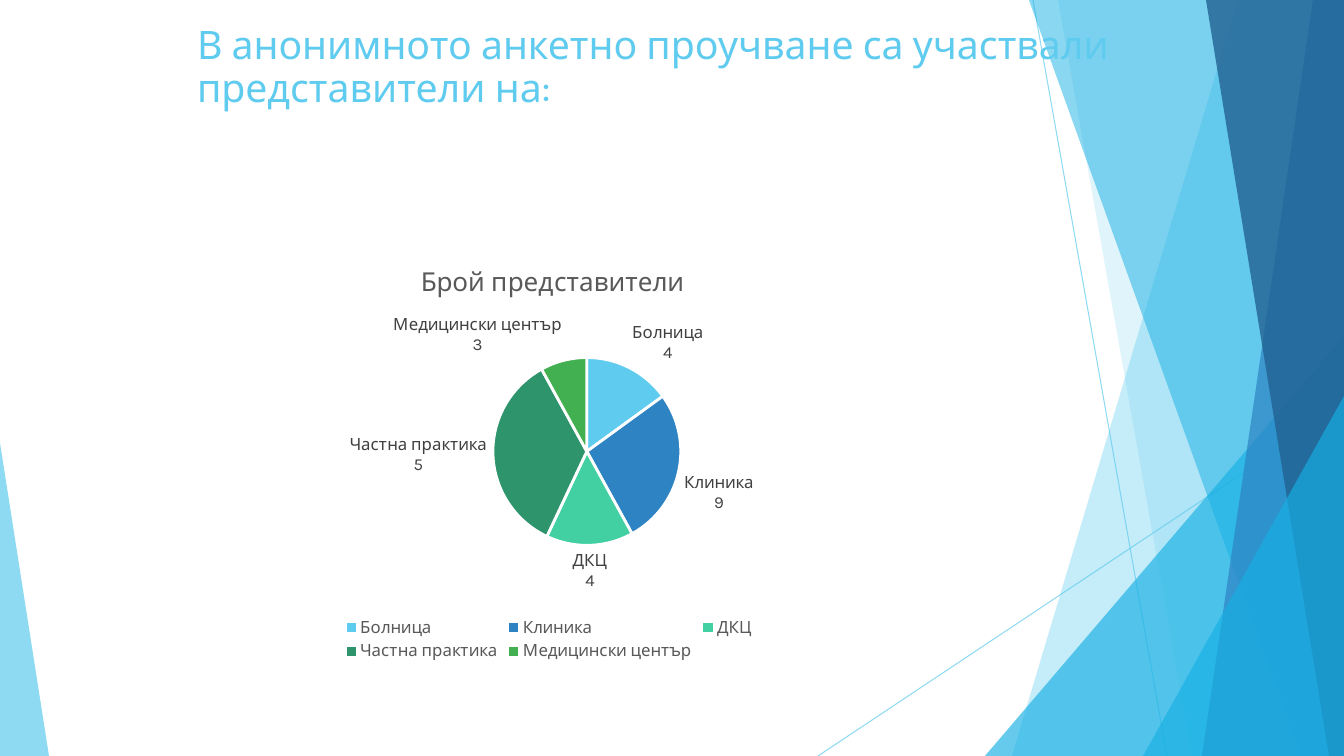
from lxml import etree
from pptx import Presentation
from pptx.chart.data import CategoryChartData
from pptx.dml.color import RGBColor
from pptx.enum import chart as charts, shapes, text
from pptx.oxml.ns import qn
from pptx.util import Emu, Pt

SCALE = 914400 / 100.8
FONT = "Karla"
COLORS = {
    "sky": "5FCBEF", "azure": "17B0E4", "blue": "2E83C3", "navy": "226292",
    "mint": "42D0A2", "teal": "2E946B", "green": "42B051",
    "white": "FFFFFF", "gray": "595959", "dark": "404040",
}
SLICES = [
    ("Болница", 15, 4, "sky"),
    ("Клиника", 27, 9, "blue"),
    ("ДКЦ", 15, 4, "mint"),
    ("Частна практика", 35, 5, "teal"),
    ("Медицински център", 8, 3, "green"),
]


def px(length):
    """Turn pixels into EMU."""
    return Emu(round(length * SCALE))


def rgb(name):
    """Look up a named colour."""
    return RGBColor.from_string(COLORS[name])


def style_font(font, size, color):
    """Set the typeface, size and colour of a font."""
    font.name, font.size, font.bold = FONT, Pt(size), False
    font.color.rgb = rgb(color)


def write(frame, words, size=12, color="dark", align=None, spacing=None):
    """Fill a text frame with formatted words, one paragraph per line."""
    frame.text = words
    for para in frame.paragraphs:
        if align is not None:
            para.alignment = align
        if spacing:
            para.line_spacing = spacing
        for span in para.runs:
            style_font(span.font, size, color)


def set_opacity(shape, percent):
    """Make every colour of a shape partly transparent."""
    for color in list(shape._element.spPr.iter(qn("a:srgbClr"))):
        etree.SubElement(color, qn("a:alpha")).set("val", str(percent * 1000))


def paint(shape, color, opacity):
    """Give a shape a translucent fill and no outline or shadow."""
    shape.shadow.inherit = False
    shape.fill.solid()
    shape.fill.fore_color.rgb = rgb(color)
    shape.line.fill.background()
    set_opacity(shape, opacity)


def add_ray(page, start, end):
    """Draw a thin translucent line."""
    ray = page.shapes.add_connector(
        shapes.MSO_CONNECTOR.STRAIGHT, *map(px, start + end))
    ray.line.color.rgb = rgb("sky")
    ray.line.width = Pt(0.75)
    set_opacity(ray, 70)
    etree.SubElement(ray._element.spPr, qn("a:effectLst"))


def add_band(page, box, top_x, bottom_x, color, opacity):
    """Fill the box to the right of a slanted edge."""
    left, top, width, height = box
    right, bottom = left + width, top + height
    corners = [(left + top_x, top), (right, top), (right, bottom), (left + bottom_x, bottom)]
    points = [(px(x), px(y)) for x, y in corners]
    builder = page.shapes.build_freeform(*points[0], scale=1.0)
    builder.add_line_segments(points[1:], close=True)
    paint(builder.convert_to_shape(), color, opacity)


def add_wedge(page, box, width, height, peak, color, opacity):
    """Stand a right triangle in the bottom corner on the side of its peak."""
    left, top, box_width, box_height = box
    x = left + peak * (box_width - width)
    wedge = page.shapes.add_shape(
        shapes.MSO_SHAPE.ISOSCELES_TRIANGLE,
        *map(px, (x, top + box_height - height, width, height)))
    wedge.adjustments[0] = peak
    paint(wedge, color, opacity)


def add_facets(page, box):
    """Draw the faceted decoration along both sides of the box."""
    left, top, width, height = box
    right, bottom = left + width, top + height
    add_ray(page, (left + 1033, top), (left + 1167, bottom))
    add_ray(page, (right, top + 406), (left + 818, bottom))
    add_band(page, box, 1238, 1012, "sky", 36)
    add_band(page, box, 1058, 1192, "sky", 20)
    add_wedge(page, box, 359, 420, 1, "azure", 66)
    add_band(page, box, 1029, 1301, "azure", 50)
    add_band(page, box, 1313, 1202, "blue", 70)
    add_band(page, box, 1206, 1329, "navy", 80)
    add_wedge(page, box, 201, 360, 1, "azure", 66)
    add_wedge(page, box, 49, 313, 0, "sky", 70)


def add_title(page, box, words):
    """Place the title placeholder in front of the decoration."""
    title = page.shapes.title
    title.left, title.top, title.width, title.height = map(px, box)
    frame = title.text_frame
    frame.word_wrap = True
    frame.auto_size = text.MSO_AUTO_SIZE.NONE
    frame.vertical_anchor = text.MSO_ANCHOR.TOP
    write(frame, words, size=28, color="sky", align=text.PP_ALIGN.LEFT, spacing=0.9)
    page.shapes._spTree.append(title._element)


def pin(part, index, inner=False, **fractions):
    """Fix a chart part at fractions of the chart area."""
    for old in part.findall(qn("c:layout")):
        part.remove(old)
    layout = etree.Element(qn("c:layout"))
    manual = etree.SubElement(layout, qn("c:manualLayout"))
    settings = {"layoutTarget": "inner"} if inner else {}
    settings.update(xMode="edge", yMode="edge", **fractions)
    for name, value in settings.items():
        etree.SubElement(manual, qn("c:" + name)).set("val", str(value))
    part.insert(index, layout)


def add_pie(page, box, heading):
    """Chart the represented institutions as a labelled pie."""
    data = CategoryChartData()
    data.categories = [name for name, *_ in SLICES]
    data.add_series(heading, [share for _, share, *_ in SLICES])
    chart = page.shapes.add_chart(
        charts.XL_CHART_TYPE.PIE, *map(px, box), data).chart
    style_font(chart.font, 10, "dark")
    chart.has_title = True
    write(chart.chart_title.text_frame, heading, size=18.6, color="gray")
    pin(chart.chart_title._element, 1, x=0.36, y=0.05)

    chart.has_legend = True
    legend = chart.legend
    legend.position = charts.XL_LEGEND_POSITION.BOTTOM
    legend.include_in_layout = False
    style_font(legend.font, 12, "gray")
    pin(legend._element, 1, x=0.28, y=0.88, w=0.44, h=0.12)

    plot = chart.plots[0]
    plot.vary_by_categories = True
    pin(chart._chartSpace.chart.plotArea, 0, inner=True, x=0.44, y=0.28, w=0.2, h=0.44)
    for index, (name, _, count, color) in enumerate(SLICES):
        point = plot.series[0].points[index]
        point.format.fill.solid()
        point.format.fill.fore_color.rgb = rgb(color)
        point.format.line.color.rgb = rgb("white")
        point.format.line.width = Pt(2)
        label = point.data_label
        write(label.text_frame, f"{name}\n{count}")
        label.position = charts.XL_LABEL_POSITION.OUTSIDE_END


def main():
    """Build the survey slide and save the deck."""
    deck = Presentation()
    deck.slide_width, deck.slide_height = px(1344), px(756)
    page = deck.slides.add_slide(deck.slide_layouts[5])
    add_facets(page, (0, 0, 1344, 756))
    add_title(page, (187, 21, 1064, 89),
              "В анонимното анкетно проучване са участвали представители на:")
    add_pie(page, (75, 238, 948, 427), "Брой представители")
    deck.save("out.pptx")


if __name__ == "__main__":
    main()
